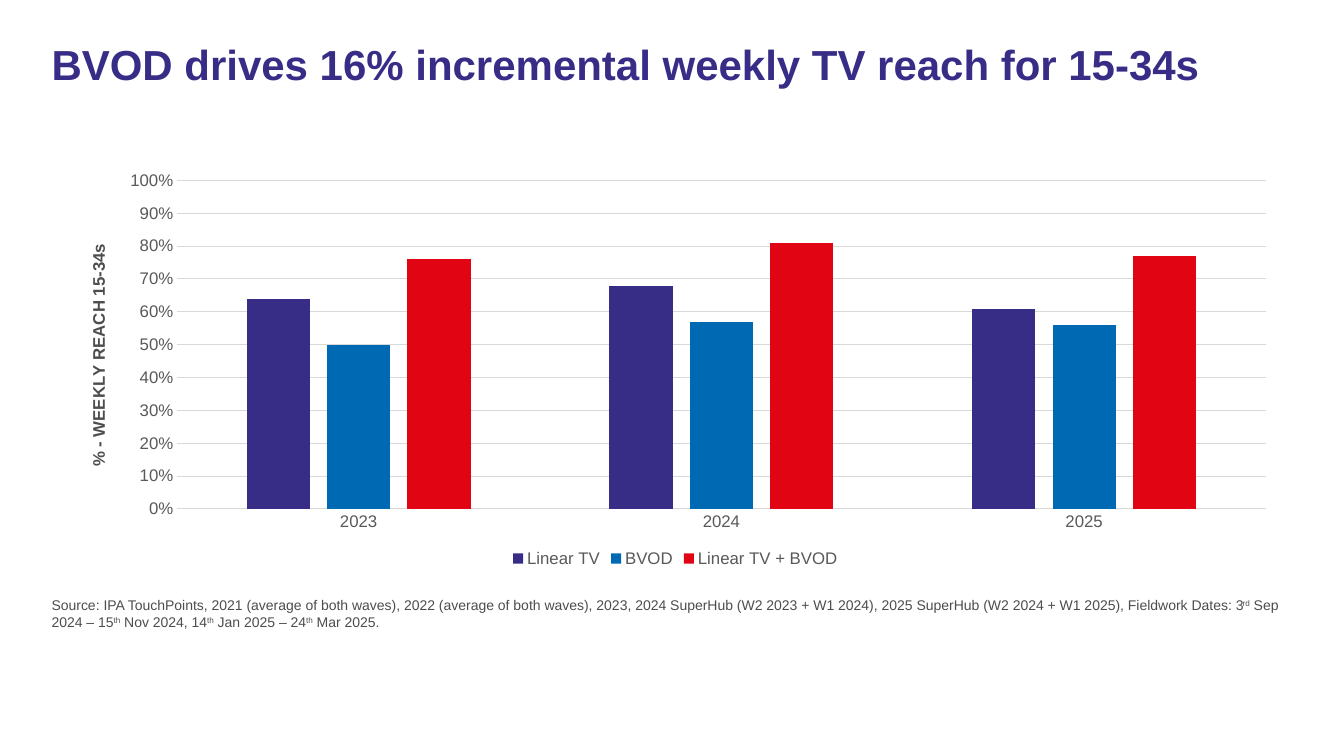
from lxml.etree import SubElement
from pptx import Presentation
from pptx.chart.data import CategoryChartData as Data
from pptx.dml.color import RGBColor as RGB
from pptx.enum.chart import XL_CHART_TYPE as Kind, XL_LEGEND_POSITION as Spot
from pptx.enum.chart import XL_TICK_MARK as Tick
from pptx.oxml.ns import qn
from pptx.util import Inches, Pt

WIDE, HIGH = Inches(13.33), Inches(7.5)
NAVY, BLUE, RED = RGB(0x37, 0x2D, 0x87), RGB(0x00, 0x69, 0xB4), RGB(0xE1, 0x05, 0x14)
DARK, GREY, PALE = RGB(0x4D, 0x4D, 0x4D), RGB(0x59, 0x59, 0x59), RGB(0xD9, 0xD9, 0xD9)

TITLE = "BVOD drives 16% incremental weekly TV reach for 15-34s"
SOURCE = (
    "Source: IPA TouchPoints, 2021 (average of both waves), 2022 (average of both "
    "waves), 2023, 2024 SuperHub (W2 2023 + W1 2024), 2025 SuperHub (W2 2024 + W1 "
    "2025), Fieldwork Dates: 3^rd^ Sep 2024 – 15^th^ Nov 2024, 14^th^ Jan 2025 – "
    "24^th^ Mar 2025."
)
YEARS = ["2023", "2024", "2025"]
REACH = [
    ("Linear TV", NAVY, (0.64, 0.68, 0.61)),
    ("BVOD", BLUE, (0.5, 0.57, 0.56)),
    ("Linear TV + BVOD", RED, (0.76, 0.81, 0.77)),
]


def area(left, top, width, height):
    """Turn shares of the slide's size into lengths."""
    return [int(part * side) for part, side in
            zip((left, top, width, height), (WIDE, HIGH, WIDE, HIGH))]


def style(font, size, color, bold=False):
    """Set the face, size, colour and weight of a font."""
    font.name, font.size, font.bold = "Arial", Pt(size), bold
    font.color.rgb = color


def add_text(slide, box, text, size, color, bold=False, space=1.0):
    """Add a wrapped paragraph, with text between carets raised."""
    frame = slide.shapes.add_textbox(*box).text_frame
    frame.word_wrap = True
    para = frame.paragraphs[0]
    para.line_spacing = space
    style(para.font, size, color, bold)
    for index, part in enumerate(text.split("^")):
        run = para.add_run()
        run.text = part
        if index % 2:
            run.font._element.set("baseline", "30000")


def place(parent, index, **shares):
    """Fix a chart part at shares of the chart's size."""
    for old in parent.findall(qn("c:layout")):
        parent.remove(old)
    layout = SubElement(parent, qn("c:layout"))
    parent.insert(index, layout)
    manual = SubElement(layout, qn("c:manualLayout"))
    if "w" in shares:
        SubElement(manual, qn("c:layoutTarget")).set("val", "inner")
    for mode in ("xMode", "yMode"):
        SubElement(manual, qn(f"c:{mode}")).set("val", "edge")
    for name, share in shares.items():
        SubElement(manual, qn(f"c:{name}")).set("val", str(share))


def set_axes(chart):
    """Style both axes, the grid and the upright axis title."""
    years, reach = chart.category_axis, chart.value_axis
    for axis in (years, reach):
        axis.major_tick_mark = axis.minor_tick_mark = Tick.NONE
        style(axis.tick_labels.font, 12, GREY)
    reach.minimum_scale, reach.maximum_scale, reach.major_unit = 0, 1, 0.1
    reach.tick_labels.number_format = "0%"
    reach.tick_labels.number_format_is_linked = False
    reach.format.line.fill.background()
    for line in (years.format.line, reach.major_gridlines.format.line):
        line.color.rgb, line.width = PALE, Pt(0.75)
    title = reach.axis_title
    frame = title.text_frame
    frame.text = "% - WEEKLY REACH 15-34s"
    style(frame.paragraphs[0].font, 12, DARK, True)
    frame._txBody.bodyPr.set("rot", "-5400000")
    frame._txBody.bodyPr.set("vert", "horz")
    place(title._element, 1, x=0.02, y=0.19)


def add_bars(slide, box):
    """Add the clustered columns of weekly reach."""
    data = Data(number_format="0%")
    data.categories = YEARS
    for name, _, values in REACH:
        data.add_series(name, values)
    chart = slide.shapes.add_chart(Kind.COLUMN_CLUSTERED, *box, data).chart
    chart.has_title = False
    style(chart.font, 10, RGB(0, 0, 0))
    plot = chart.plots[0]
    plot.gap_width, plot.overlap, plot.vary_by_categories = 219, -27, False
    for bars, (_, color, _) in zip(plot.series, REACH):
        bars.format.fill.solid()
        bars.format.fill.fore_color.rgb = color
    set_axes(chart)
    chart.has_legend = True
    chart.legend.position = Spot.BOTTOM
    chart.legend.include_in_layout = False
    style(chart.legend.font, 12, GREY)
    place(plot._element.getparent(), 0, x=0.095, y=0.042, w=0.885, h=0.805)


def main():
    """Build and save the slide."""
    deck = Presentation()
    deck.slide_width, deck.slide_height = WIDE, HIGH
    slide = deck.slides.add_slide(deck.slide_layouts[6])
    add_text(slide, area(0.031, 0.052, 0.93, 0.15), TITLE, 30, NAVY, True, 0.9)
    add_bars(slide, area(0.045, 0.216, 0.915, 0.54))
    add_text(slide, area(0.031, 0.783, 0.93, 0.044), SOURCE, 10, DARK)
    deck.save("out.pptx")


if __name__ == "__main__":
    main()
